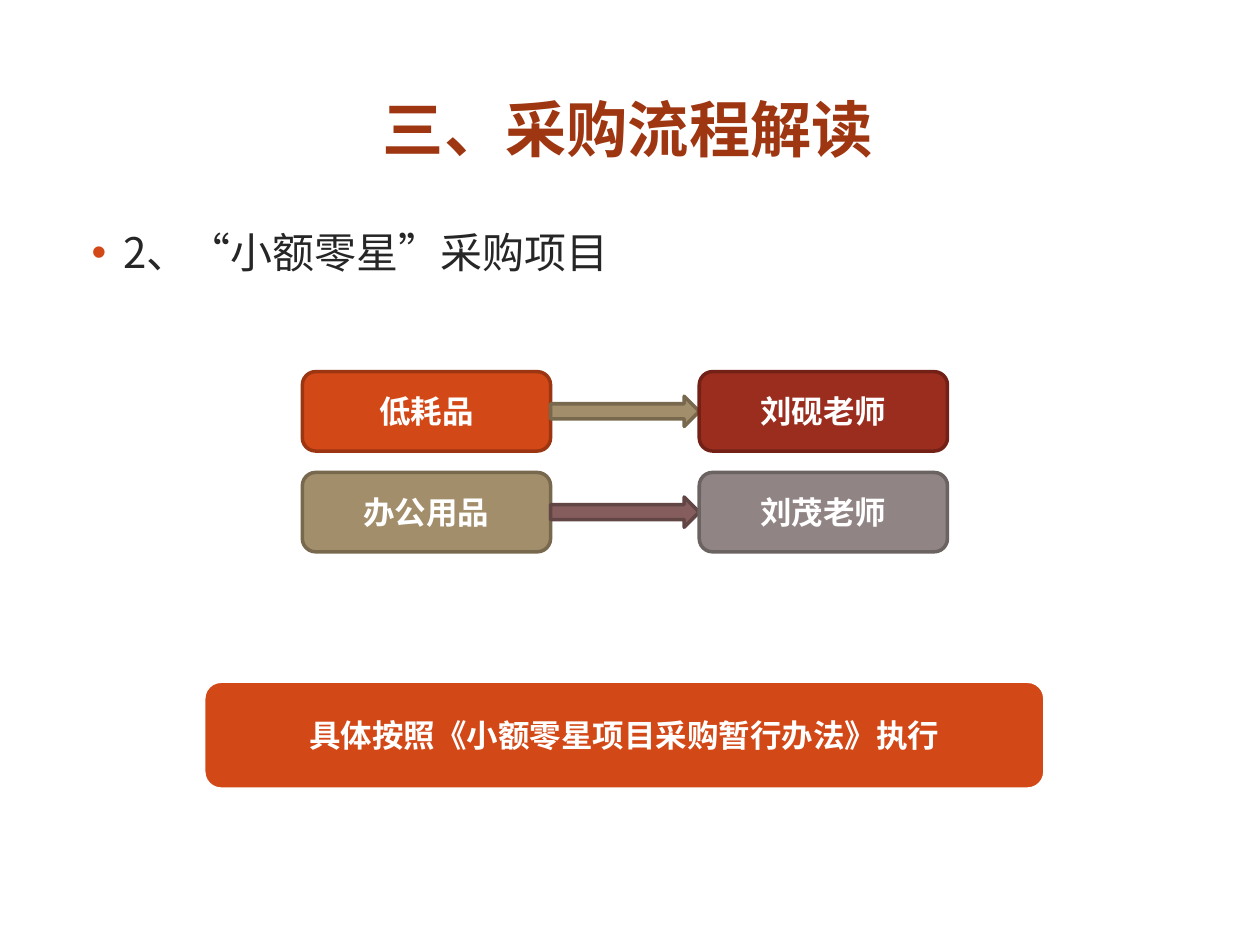
from dataclasses import dataclass

from lxml import etree
from pptx import Presentation
from pptx.dml.color import RGBColor
from pptx.enum import shapes, text
from pptx.oxml import ns
from pptx.util import Inches, Pt


@dataclass(frozen=True)
class Theme:
    cjk_font: str = "Noto Sans CJK SC"
    label_font: str = "League Spartan"
    title_size: int = 35
    body_size: int = 24
    label_size: int = 18
    title: str = "9E3611"
    body: str = "262626"
    white: str = "FFFFFF"
    # Fill and outline pairs
    orange: tuple = ("D34817", "9C3511")
    tan: tuple = ("A28E6A", "78694E")
    mauve: tuple = ("855D5D", "624545")
    red: tuple = ("9B2D1F", "732117")
    gray: tuple = ("918485", "6B6262")
    banner: tuple = ("D34817", "FFFFFF")


THEME = Theme()


def add_run(paragraph, content, size, color, font, bold=False):
    run = paragraph.add_run()
    run.text = content
    run.font.size = Pt(size)
    run.font.bold = bold
    run.font.name = font
    run.font.color.rgb = RGBColor.from_string(color)
    properties = run._r.get_or_add_rPr()
    properties.set("lang", "zh-CN")
    east_asian = etree.SubElement(properties, ns.qn("a:ea"))
    east_asian.set("typeface", THEME.cjk_font)


def add_text_box(slide, left, top, width, height, anchor):
    frame = slide.shapes.add_textbox(
        Inches(left), Inches(top), Inches(width), Inches(height)).text_frame
    frame.word_wrap = True
    frame.vertical_anchor = anchor
    return frame.paragraphs[0]


def add_bullet(paragraph, color, left, indent):
    properties = paragraph._p.get_or_add_pPr()
    properties.set("marL", str(Inches(left)))
    properties.set("indent", str(Inches(indent)))
    bullet_color = etree.SubElement(properties, ns.qn("a:buClr"))
    etree.SubElement(bullet_color, ns.qn("a:srgbClr")).set("val", color)
    etree.SubElement(properties, ns.qn("a:buFont")).set("typeface", "Arial")
    etree.SubElement(properties, ns.qn("a:buChar")).set("char", "•")


def add_block(slide, kind, left, top, width, height, colors, line_width=2):
    shape = slide.shapes.add_shape(
        kind, Inches(left), Inches(top), Inches(width), Inches(height))
    shape.shadow.inherit = False
    fill, line = colors
    shape.fill.solid()
    shape.fill.fore_color.rgb = RGBColor.from_string(fill)
    shape.line.color.rgb = RGBColor.from_string(line)
    shape.line.width = Pt(line_width)
    return shape


def add_label_box(slide, label, left, top, width, height, colors, line_width=2):
    shape = add_block(slide, shapes.MSO_SHAPE.ROUNDED_RECTANGLE,
                      left, top, width, height, colors, line_width)
    frame = shape.text_frame
    frame.word_wrap = True
    frame.vertical_anchor = text.MSO_ANCHOR.MIDDLE
    paragraph = frame.paragraphs[0]
    paragraph.alignment = text.PP_ALIGN.CENTER
    add_run(paragraph, label, THEME.label_size, THEME.white,
            THEME.label_font, bold=True)


def add_flow_row(slide, top, item, item_colors, arrow_colors,
                 teacher, teacher_colors):
    left, box_width, box_height = 2.4, 1.97, 0.63
    arrow_width, arrow_height = 1.18, 0.24
    arrow_left = left + box_width
    add_label_box(slide, item, left, top, box_width, box_height, item_colors)
    add_block(slide, shapes.MSO_SHAPE.RIGHT_ARROW, arrow_left,
              top + (box_height - arrow_height) / 2,
              arrow_width, arrow_height, arrow_colors)
    add_label_box(slide, teacher, arrow_left + arrow_width, top,
                  box_width, box_height, teacher_colors)


def main():
    presentation = Presentation()
    presentation.slide_width = Inches(10)
    presentation.slide_height = Inches(7.5)
    slide = presentation.slides.add_slide(presentation.slide_layouts[6])

    # Title
    title = add_text_box(slide, 0.47, 0.45, 9.03, 1.14, text.MSO_ANCHOR.MIDDLE)
    title.alignment = text.PP_ALIGN.CENTER
    add_run(title, "三、采购流程解读", THEME.title_size, THEME.title,
            THEME.cjk_font, bold=True)

    # Bullet heading
    heading = add_text_box(slide, 0.5, 1.75, 9, 5.62, text.MSO_ANCHOR.TOP)
    add_bullet(heading, THEME.orange[0], 0.38, -0.25)
    add_run(heading, "2、“小额零星”采购项目", THEME.body_size, THEME.body,
            THEME.cjk_font)

    # Who handles which purchase
    rows = [
        ("低耗品", THEME.orange, THEME.tan, "刘砚老师", THEME.red),
        ("办公用品", THEME.tan, THEME.mauve, "刘茂老师", THEME.gray),
    ]
    for index, row in enumerate(rows):
        add_flow_row(slide, 2.95 + 0.8 * index, *row)

    # Closing rule
    add_label_box(slide, "具体按照《小额零星项目采购暂行办法》执行",
                  1.61, 5.4, 6.69, 0.87, THEME.banner, line_width=3)

    presentation.save("out.pptx")


if __name__ == "__main__":
    main()
